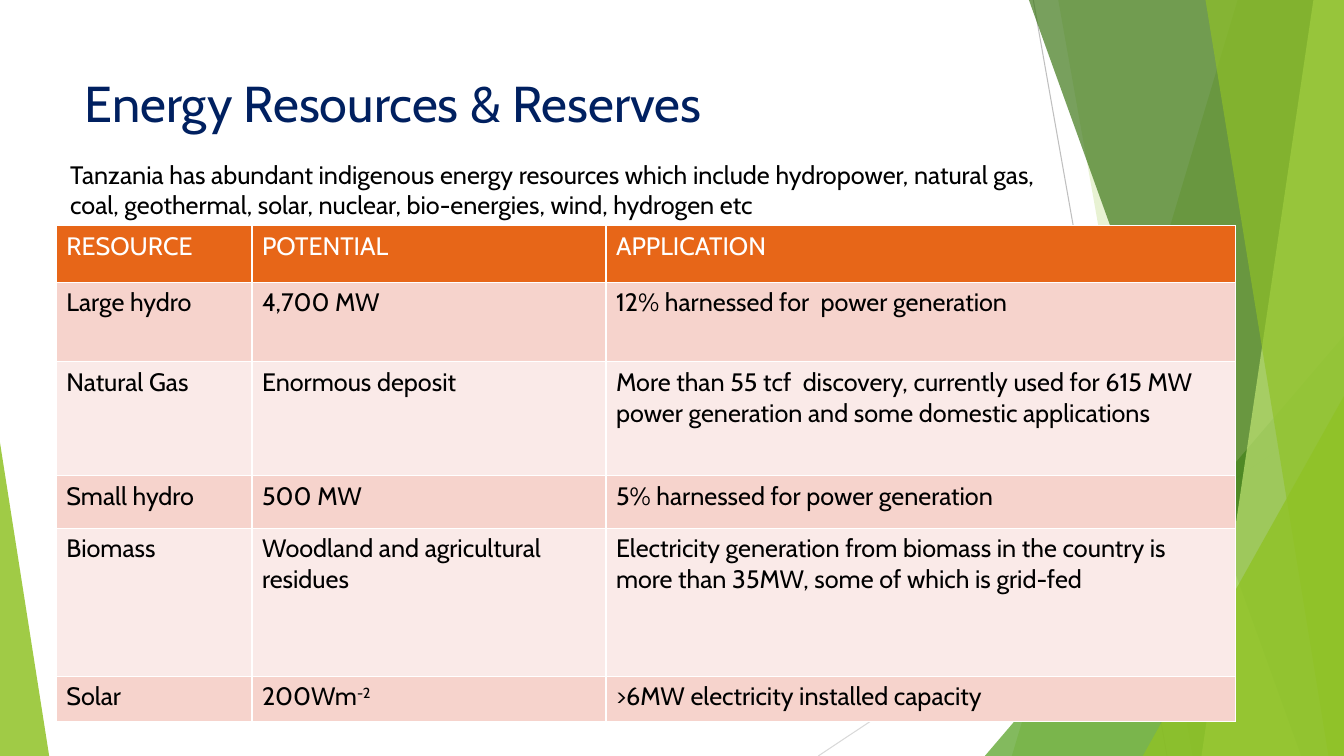
from lxml import etree
from pptx import Presentation, util as u
from pptx.dml.color import RGBColor
from pptx.enum import shapes, text
from pptx.oxml import ns, parse_xml

Cm, Pt = u.Cm, u.Pt
WIDTH, HEIGHT = 33.87, 19.05


def paint(fill, hex_color, opacity=100):
    """Fill with a solid colour; opacity is in percent."""
    fill.solid()
    fill.fore_color.rgb = RGBColor.from_string(hex_color)
    if opacity < 100:
        color = fill._xPr.find(".//" + ns.qn("a:srgbClr"))
        etree.SubElement(color, ns.qn("a:alpha"), val=str(opacity * 1000))


def write(paragraph, words, size, hex_color):
    run = paragraph.add_run()
    run.text = words
    style = {"name": "Cabin", "size": Pt(size), "bold": False}
    for key, value in style.items():
        setattr(run.font, key, value)
    paint(run.font.fill, hex_color)
    return run


deck = Presentation()
deck.slide_width, deck.slide_height = Cm(WIDTH), Cm(HEIGHT)
slide = deck.slides.add_slide(deck.slide_layouts[5])

# Thin rays behind the green facets
rays = [(26.04, 0, 29.41, HEIGHT, "BFBFBF"), (WIDTH, 10.24, 20.62, HEIGHT, "D9D9D9")]
for *ends, ray_color in rays:
    ray = slide.shapes.add_connector(shapes.MSO_CONNECTOR.STRAIGHT, *map(Cm, ends))
    paint(ray.line.fill, ray_color)
    ray.line.width = Pt(0.75)
    etree.SubElement(ray._element.spPr, ns.qn("a:effectLst"))

# Bands run to the right edge: top-left x, bottom-left x, colour, opacity
# Wedges: left, top, apex position, colour, opacity, right edge
bands_and_wedges = [
    ("band", 31.19, 25.5, "90C226", 30),
    ("band", 26.67, 30.05, "90C226", 20),
    ("wedge", 24.82, 8.46, "54A021", 72),
    ("band", 25.93, 32.79, "3F7819", 70),
    ("band", 33.1, 30.28, "C0E474", 70),
    ("band", 30.38, 33.48, "90C226", 65),
    ("wedge", 28.8, 9.98, "90C226", 80),
    ("wedge", 0, 11.15, "90C226", 85),
]
for kind, first, second, facet_color, opacity in bands_and_wedges:
    if kind == "band":
        outline = slide.shapes.build_freeform(Cm(first), 0)
        corners = [(WIDTH, 0), (WIDTH, HEIGHT), (second, HEIGHT)]
        outline.add_line_segments([(Cm(x), Cm(y)) for x, y in corners])
        facet = outline.convert_to_shape()
    else:
        span = WIDTH - first if first else 1.24
        facet = slide.shapes.add_shape(
            shapes.MSO_SHAPE.ISOSCELES_TRIANGLE,
            Cm(first), Cm(second), Cm(span), Cm(HEIGHT - second))
        facet.adjustments[0] = 1 if first else 0
    paint(facet.fill, facet_color, opacity)
    facet.line.fill.background()
    facet.shadow.inherit = False

# Title, brought in front of the facets
title = slide.shapes.title
title._element.getparent().append(title._element)
title_box = {"left": 1.88, "top": 1.7, "width": 23.88, "height": 1.78}
for key, value in title_box.items():
    setattr(title, key, Cm(value))
title.text_frame.vertical_anchor = text.MSO_ANCHOR.MIDDLE
heading = title.text_frame.paragraphs[0]
heading.alignment = text.PP_ALIGN.LEFT
write(heading, "Energy Resources & Reserves", 36, "002060")

intro = slide.shapes.add_textbox(Cm(1.52), Cm(3.89), Cm(24.92), Cm(1.8))
intro.text_frame.word_wrap = True
write(intro.text_frame.paragraphs[0],
      "Tanzania has abundant indigenous energy resources which include hydropower, "
      "natural gas, coal, geothermal, solar, nuclear, bio-energies, wind, hydrogen etc",
      18, "000000")

# Resource table
resources = [
    ("RESOURCE", "POTENTIAL", "APPLICATION"),
    ("Large hydro", "4,700 MW", "12% harnessed for  power generation"),
    ("Natural Gas", "Enormous deposit",
     "More than 55 tcf  discovery, currently used for 615 MW power generation "
     "and some domestic applications"),
    ("Small hydro", "500 MW", "5% harnessed for power generation"),
    ("Biomass", "Woodland and agricultural residues",
     "Electricity generation from biomass in the country is more than 35MW, "
     "some of which is grid-fed"),
    ("Solar", "200Wm", ">6MW electricity installed capacity"),
]
column_widths = [4.93, 8.92, 15.87]
row_heights = [1.42, 2.01, 2.87, 1.32, 3.73, 1.14]
table = slide.shapes.add_table(
    len(resources), len(column_widths), Cm(1.42), Cm(5.69),
    Cm(sum(column_widths)), Cm(sum(row_heights))).table
for column, width in zip(table.columns, column_widths):
    column.width = Cm(width)

for r, (entries, height) in enumerate(zip(resources, row_heights)):
    table.rows[r].height = Cm(height)
    row_color = "E76618" if r == 0 else ("FAEAE8", "F6D3CC")[r % 2]
    for c, entry in enumerate(entries):
        cell = table.cell(r, c)
        write(cell.text_frame.paragraphs[0], entry, 18, "000000" if r else "FFFFFF")
        properties = cell._tc.get_or_add_tcPr()
        for side in ("lnL", "lnR", "lnT", "lnB"):
            properties.append(parse_xml(
                f'<a:{side} {ns.nsdecls("a")} w="12700"><a:solidFill>'
                f'<a:srgbClr val="FFFFFF"/></a:solidFill></a:{side}>'))
        paint(cell.fill, row_color)

exponent = write(table.cell(5, 1).text_frame.paragraphs[0], "-2", 18, "000000")
exponent.font._element.set("baseline", "30000")

deck.save("out.pptx")
